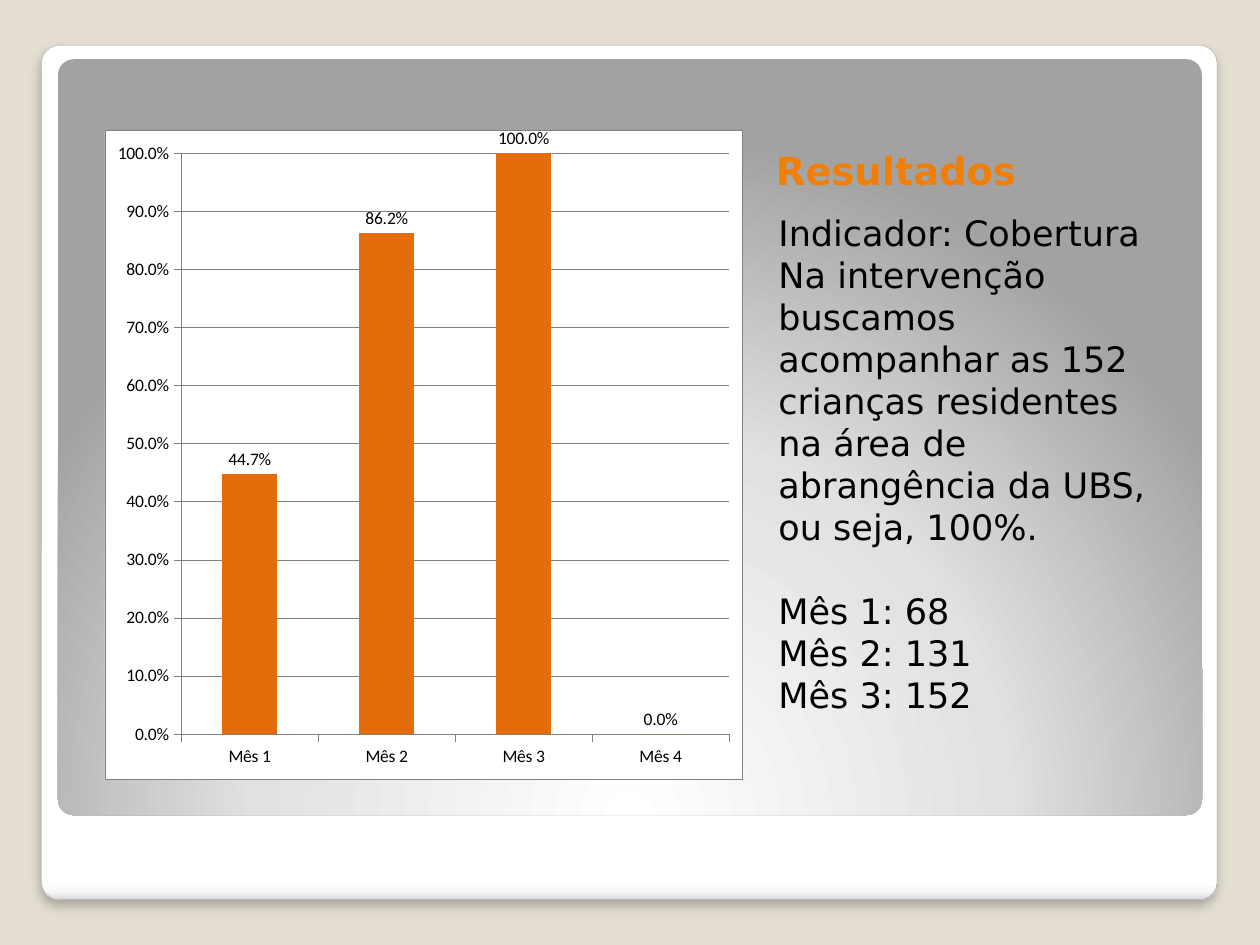
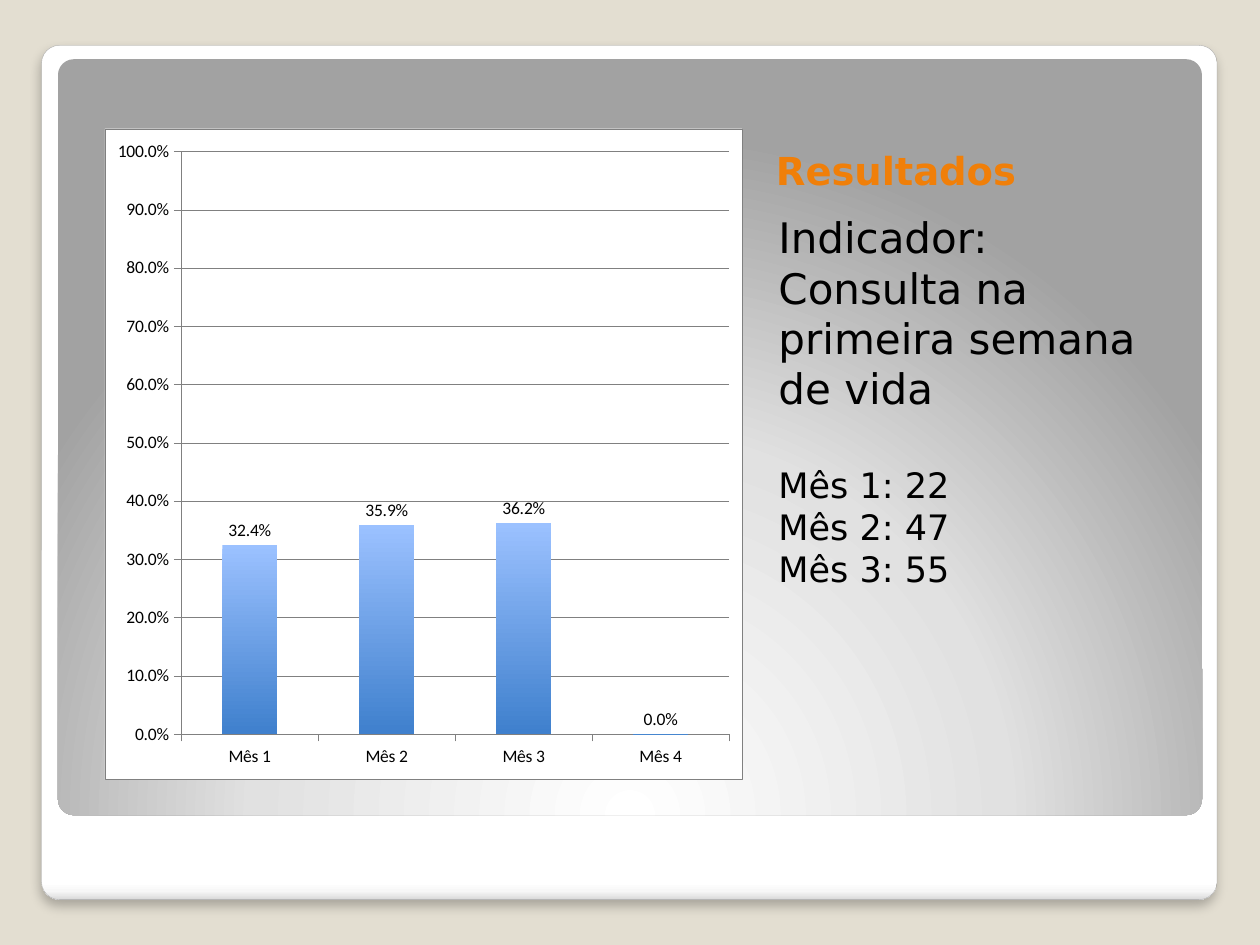
import pptx
import pptx.util
import pptx.oxml
import pptx.oxml.ns
import pptx.dml.color
import pptx.chart.data
import pptx.enum.chart
import pptx.enum.shapes
import pptx.enum.text
from pptx.util import Inches

# Shared look
FONT = "DejaVu Sans"
BLACK, GREY, WHITE = "000000", "808080", "FFFFFF"
SAND, ORANGE = "E3DED1", "F07F09"
DOWN = '<a:lin ang="5400000" scaled="0"/>'
GLOW = ('<a:path path="circle"><a:fillToRect l="50000" t="175000" '
        'r="50000" b="-75000"/></a:path>')
SHADE = ('<a:effectLst %s><a:outerShdw blurRad="76200" dist="50800" dir="5400000" '
         'algn="tl" rotWithShape="0"><a:srgbClr val="000000"><a:alpha val="25000"/>'
         '</a:srgbClr></a:outerShdw></a:effectLst>' % pptx.oxml.ns.nsdecls("a"))
EDGE = ('<c:spPr %s><a:solidFill><a:srgbClr val="%s"/></a:solidFill><a:ln w="3175">'
        '<a:solidFill><a:srgbClr val="%s"/></a:solidFill></a:ln></c:spPr>'
        % (pptx.oxml.ns.nsdecls("c", "a"), WHITE, GREY))
INNER = ('<c:layout %s><c:manualLayout><c:layoutTarget val="inner"/>'
         '<c:xMode val="edge"/><c:yMode val="edge"/><c:x val="0.12"/><c:y val="0.035"/>'
         '<c:w val="0.86"/><c:h val="0.895"/></c:manualLayout></c:layout>'
         % pptx.oxml.ns.nsdecls("c"))
PANELS = [
    (0.33, 0.36, 9.33, 6.78, DOWN,
     [(0, WHITE), (98, WHITE), (99, "F7F7F7"), (100, "DADADA")]),
    (0.46, 0.47, 9.08, 6, GLOW, [(0, WHITE), (55, "E1E1E1"), (100, "A2A2A2")]),
]

# Text rows: words, size, space before
PAGES = [
    {"vals": [0.447, 0.862, 1, 0], "bar": "E46C0A",
     "rows": [("Indicador: Cobertura", 20, 0),
              ("Na intervenção buscamos acompanhar as 152 crianças residentes "
               "na área de abrangência da UBS, ou seja, 100%.", 20, 0),
              ("Mês 1: 68", 20, 24), ("Mês 2: 131", 20, 0), ("Mês 3: 152", 20, 0)]},
    {"vals": [0.324, 0.359, 0.362, 0], "bar": [(0, "9BC1FF"), (100, "3F80CD")],
     "rows": [("Indicador: Consulta na primeira semana de vida", 24, 0),
              ("Mês 1: 22", 20, 28.8), ("Mês 2: 47", 20, 0), ("Mês 3: 55", 20, 0)]},
]


def color(code):
    return pptx.dml.color.RGBColor.from_string(code)


def blend(fill, item, stops, way):
    """Fill an item with a gradient of (percent, colour) stops."""
    fill.gradient()
    old = item.xpath(".//a:gradFill")[0]
    marks = "".join('<a:gs pos="%d"><a:srgbClr val="%s"/></a:gs>' % (at * 1000, code)
                    for at, code in stops)
    new = pptx.oxml.parse_xml('<a:gradFill %s rotWithShape="1"><a:gsLst>%s</a:gsLst>%s'
                              '</a:gradFill>' % (pptx.oxml.ns.nsdecls("a"), marks, way))
    old.getparent().replace(old, new)


deck = pptx.Presentation()
deck.slide_width, deck.slide_height = Inches(10), Inches(7.5)

for page in PAGES:
    slide = deck.slides.add_slide(deck.slide_layouts[6])
    slide.background.fill.solid()
    slide.background.fill.fore_color.rgb = color(SAND)

    # Card and inner panel
    for left, top, width, height, way, stops in PANELS:
        panel = slide.shapes.add_shape(
            pptx.enum.shapes.MSO_SHAPE.ROUNDED_RECTANGLE,
            Inches(left), Inches(top), Inches(width), Inches(height))
        panel.adjustments[0] = 0.021
        blend(panel.fill, panel._element, stops, way)
        if way == DOWN:
            panel.line.color.rgb = color("A4A4A4")
            panel.line.width = pptx.util.Pt(0.16)
            panel._element.spPr.append(pptx.oxml.parse_xml(SHADE))
        else:
            panel.line.fill.background()
            panel.shadow.inherit = False

    # Title
    box = slide.shapes.add_textbox(Inches(6.06), Inches(0.58), Inches(3.25), Inches(1))
    frame = box.text_frame
    frame.word_wrap = True
    frame.vertical_anchor = pptx.enum.text.MSO_ANCHOR.BOTTOM
    head = frame.paragraphs[0]
    head.text = "Resultados"
    head.font.name, head.font.size, head.font.bold = FONT, pptx.util.Pt(22), True
    head.font.color.rgb = color(ORANGE)

    # Body text
    box = slide.shapes.add_textbox(Inches(6.06), Inches(1.58), Inches(3.25), Inches(4.6))
    frame = box.text_frame
    frame.word_wrap = True
    frame.margin_top = Inches(0.1)
    for count, (words, size, gap) in enumerate(page["rows"]):
        para = frame.add_paragraph() if count else frame.paragraphs[0]
        para.text = words
        para.font.name, para.font.size = FONT, pptx.util.Pt(size)
        para.font.color.rgb = color(BLACK)
        para.line_spacing = pptx.util.Pt(size * 1.2)
        para.space_before = pptx.util.Pt(gap)
        para._p.get_or_add_pPr().set("marL", str(Inches(0.02)))

    # Chart
    data = pptx.chart.data.CategoryChartData(number_format="0.0%")
    data.categories = ["Mês 1", "Mês 2", "Mês 3", "Mês 4"]
    data.add_series("Series 1", page["vals"])
    chart = slide.shapes.add_chart(
        pptx.enum.chart.XL_CHART_TYPE.COLUMN_CLUSTERED,
        Inches(0.83), Inches(1.02), Inches(5.06), Inches(5.17), data).chart
    chart.has_legend = chart.has_title = False
    chart.font.name, chart.font.size = "Calibri", pptx.util.Pt(10)
    chart.font.color.rgb = color(BLACK)
    root = chart._chartSpace
    root.chart.addnext(pptx.oxml.parse_xml(EDGE))
    area = root.chart.plotArea
    for old in area.xpath("./c:layout"):
        area.remove(old)
    area.insert(0, pptx.oxml.parse_xml(INNER))

    # Axes and grid
    scale = chart.value_axis
    scale.minimum_scale, scale.maximum_scale, scale.major_unit = 0, 1, 0.1
    scale.has_major_gridlines = True
    scale.tick_labels.number_format = "0.0%"
    scale.tick_labels.number_format_is_linked = False
    for axis in (scale, chart.category_axis):
        axis.major_tick_mark = pptx.enum.chart.XL_TICK_MARK.OUTSIDE
        axis.minor_tick_mark = pptx.enum.chart.XL_TICK_MARK.NONE
    for part in (scale, chart.category_axis, scale.major_gridlines):
        part.format.line.color.rgb = color(GREY)
        part.format.line.width = pptx.util.Pt(0.25)

    # Bars and labels
    plot = chart.plots[0]
    plot.gap_width = 150
    plot.vary_by_categories = False
    bars = plot.series[0]
    if isinstance(page["bar"], str):
        bars.format.fill.solid()
        bars.format.fill.fore_color.rgb = color(page["bar"])
    else:
        blend(bars.format.fill, bars._element, page["bar"], DOWN)
    tags = bars.data_labels
    tags.show_value = True
    tags.number_format, tags.number_format_is_linked = "0.0%", False
    tags.position = pptx.enum.chart.XL_LABEL_POSITION.OUTSIDE_END

deck.save("out.pptx")
